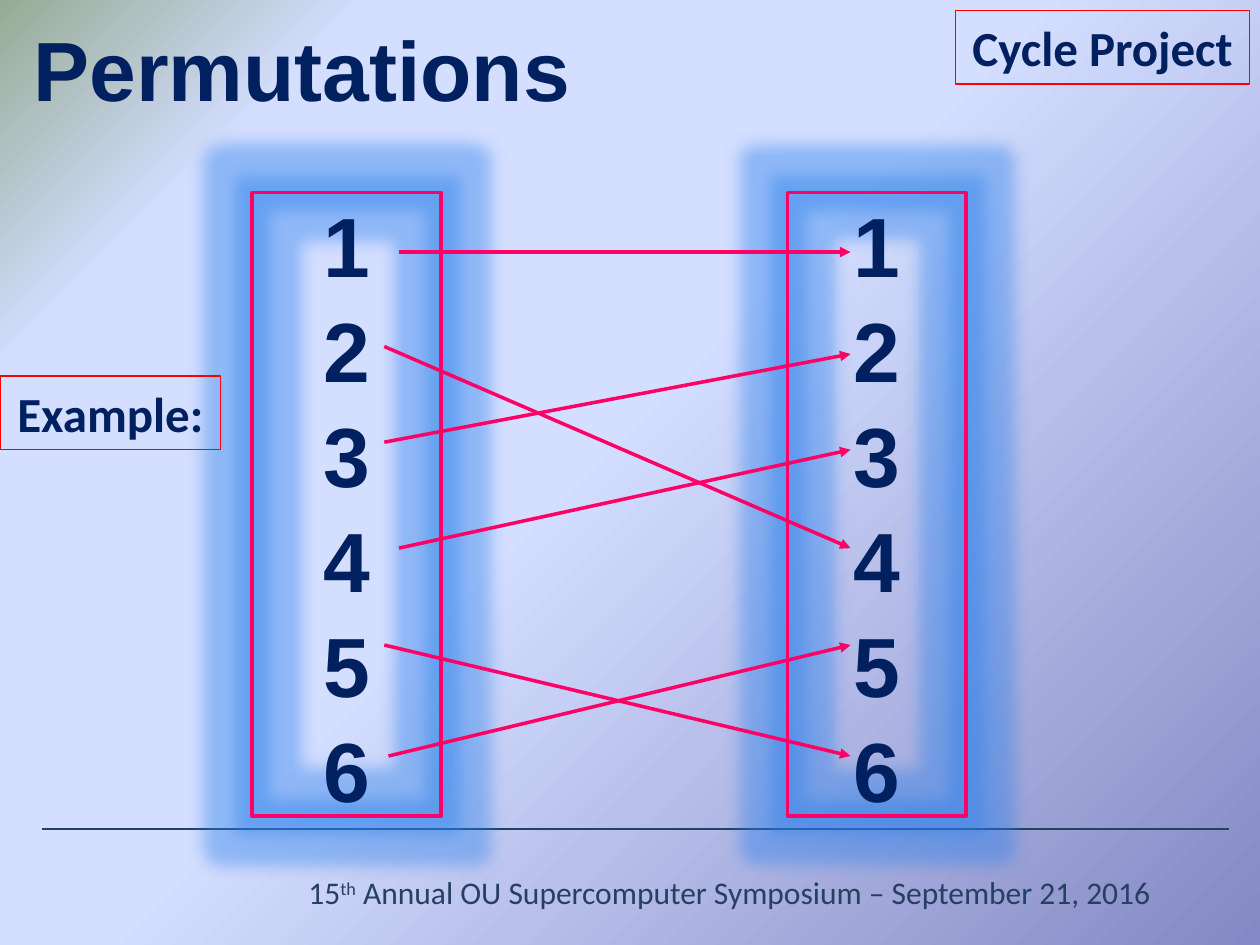
from lxml import etree
from pptx import Presentation
from pptx.dml.color import RGBColor
from pptx.enum import shapes, text
from pptx.oxml import parse_xml
from pptx.oxml.ns import nsdecls, qn
from pptx.util import Pt

NAVY = RGBColor(0x00, 0x20, 0x60)
SLATE = RGBColor(0x25, 0x40, 0x61)
PINK = RGBColor(0xFF, 0x00, 0x66)
RED = RGBColor(0xFF, 0x00, 0x00)
PALE_BLUE = RGBColor(0xB0, 0xC6, 0xE1)
GLOW_BLUE = RGBColor(0x28, 0x7F, 0xEB)
BACKGROUND_STOPS = [
    (0, RGBColor(0x84, 0x88, 0xC4)),
    (53, RGBColor(0xD4, 0xDE, 0xFF)),
    (83, RGBColor(0xD4, 0xDE, 0xFF)),
    (100, RGBColor(0x96, 0xAB, 0x94)),
]

PERMUTATION = [1, 4, 2, 3, 6, 5]
START_X = [228, 219.6, 219.6, 228, 219.6, 222]
START_Y = [144, 198, 252.7, 313.2, 368.6, 432]
END_X = 486
END_Y = [144, 202.3, 257, 313.2, 368.6, 432]


def set_background(slide):
    stops = "".join(
        f'<a:gs pos="{pos * 1000}"><a:srgbClr val="{color}"/></a:gs>'
        for pos, color in BACKGROUND_STOPS)
    slide.background.fill.solid()
    bg_pr = slide.element.cSld.find(qn("p:bg")).find(qn("p:bgPr"))
    bg_pr.replace(bg_pr[0], parse_xml(
        f'<a:gradFill {nsdecls("a")} rotWithShape="1"><a:gsLst>{stops}</a:gsLst>'
        '<a:path path="circle"><a:fillToRect l="100000" t="100000"/></a:path>'
        '</a:gradFill>'))


def style_font(font, name, size, color, bold=False):
    font.name, font.size, font.bold = name, Pt(size), bold
    font.color.rgb = color


def outline_text(p):
    """Give every run of the paragraph a thin pale contour."""
    for r in p.runs:
        r.font._element.insert(0, parse_xml(
            f'<a:ln {nsdecls("a")} w="{Pt(0.75)}"><a:solidFill>'
            f'<a:srgbClr val="{PALE_BLUE}"/></a:solidFill></a:ln>'))


def add_line(slide, x1, y1, x2, y2, color, width):
    line = slide.shapes.add_connector(
        shapes.MSO_CONNECTOR.STRAIGHT, Pt(x1), Pt(y1), Pt(x2), Pt(y2))
    line.line.color.rgb = color
    line.line.width = Pt(width)
    etree.SubElement(line._element.spPr, qn("a:effectLst"))
    return line


def add_frame(slide, left, top, width, height, color, weight):
    """Add an unfilled rectangle with a coloured border."""
    sp = slide.shapes.add_shape(
        shapes.MSO_SHAPE.RECTANGLE, Pt(left), Pt(top), Pt(width), Pt(height))
    sp.shadow.inherit = False
    sp.fill.background()
    sp.line.color.rgb = color
    sp.line.width = Pt(weight)
    return sp


def add_title(slide, left, top, width, height):
    title = slide.shapes.title
    title.left, title.top, title.width, title.height = map(
        Pt, (left, top, width, height))
    tf = title.text_frame
    tf.text = "Permutations"
    tf.vertical_anchor = text.MSO_ANCHOR.MIDDLE
    p = tf.paragraphs[0]
    p.alignment = text.PP_ALIGN.LEFT
    style_font(p.font, "Arial", 48, NAVY, True)
    outline_text(p)


def add_label(slide, caption, left, top, width, height):
    tf = add_frame(slide, left, top, width, height, RED, 0.75).text_frame
    tf.text = caption
    p = tf.paragraphs[0]
    p.alignment = text.PP_ALIGN.CENTER
    style_font(p.font, "Calibri", 28, NAVY, True)


def add_number_column(slide, left, top, width, height):
    sp = add_frame(slide, left, top, width, height, PINK, 2)
    effects = sp._element.spPr.find(qn("a:effectLst"))
    effects.append(parse_xml(
        f'<a:glow {nsdecls("a")} rad="{Pt(18)}"><a:srgbClr val="{GLOW_BLUE}">'
        '<a:alpha val="40000"/></a:srgbClr></a:glow>'))
    tf = sp.text_frame
    tf.text = "\n".join(str(n) for n in sorted(PERMUTATION))
    for p in tf.paragraphs:
        p.alignment = text.PP_ALIGN.CENTER
        p.line_spacing = 1.04
        style_font(p.font, "Arial", 48, NAVY, True)
        outline_text(p)


def add_mapping_arrows(slide):
    for x, y, image in zip(START_X, START_Y, PERMUTATION):
        arrow = add_line(slide, x, y, END_X, END_Y[image - 1], PINK, 2)
        etree.SubElement(arrow.line._get_or_add_ln(), qn("a:tailEnd"),
                         type="triangle")


def add_footer(slide, left, top, width, height):
    add_line(slide, 24, top - 21.6, left + width + 24, top - 21.6, SLATE, 1.25)
    box = slide.shapes.add_textbox(Pt(left), Pt(top), Pt(width), Pt(height))
    tf = box.text_frame
    tf.word_wrap = True
    p = tf.paragraphs[0]
    p.alignment = text.PP_ALIGN.CENTER
    style_font(p.font, "Calibri", 18, SLATE)
    for part in ("15", "th",
                 " Annual OU Supercomputer Symposium – September 21, 2016"):
        r = p.add_run()
        r.text = part
        if part == "th":
            r.font._element.set("baseline", "30000")


def main():
    prs = Presentation()
    prs.slide_width, prs.slide_height = Pt(720), Pt(540)
    slide = prs.slides.add_slide(prs.slide_layouts[5])
    set_background(slide)
    add_footer(slide, 156, 495.4, 522, 48)
    add_label(slide, "Cycle Project", 546, 6, 168, 42)
    add_title(slide, 12, 6, 534, 65.5)
    add_number_column(slide, 144, 110, 108, 356.4)
    add_number_column(slide, 450, 110, 102, 356.4)
    add_mapping_arrows(slide)
    add_label(slide, "Example:", 0, 214.8, 126, 42)
    prs.save("out.pptx")


if __name__ == "__main__":
    main()
